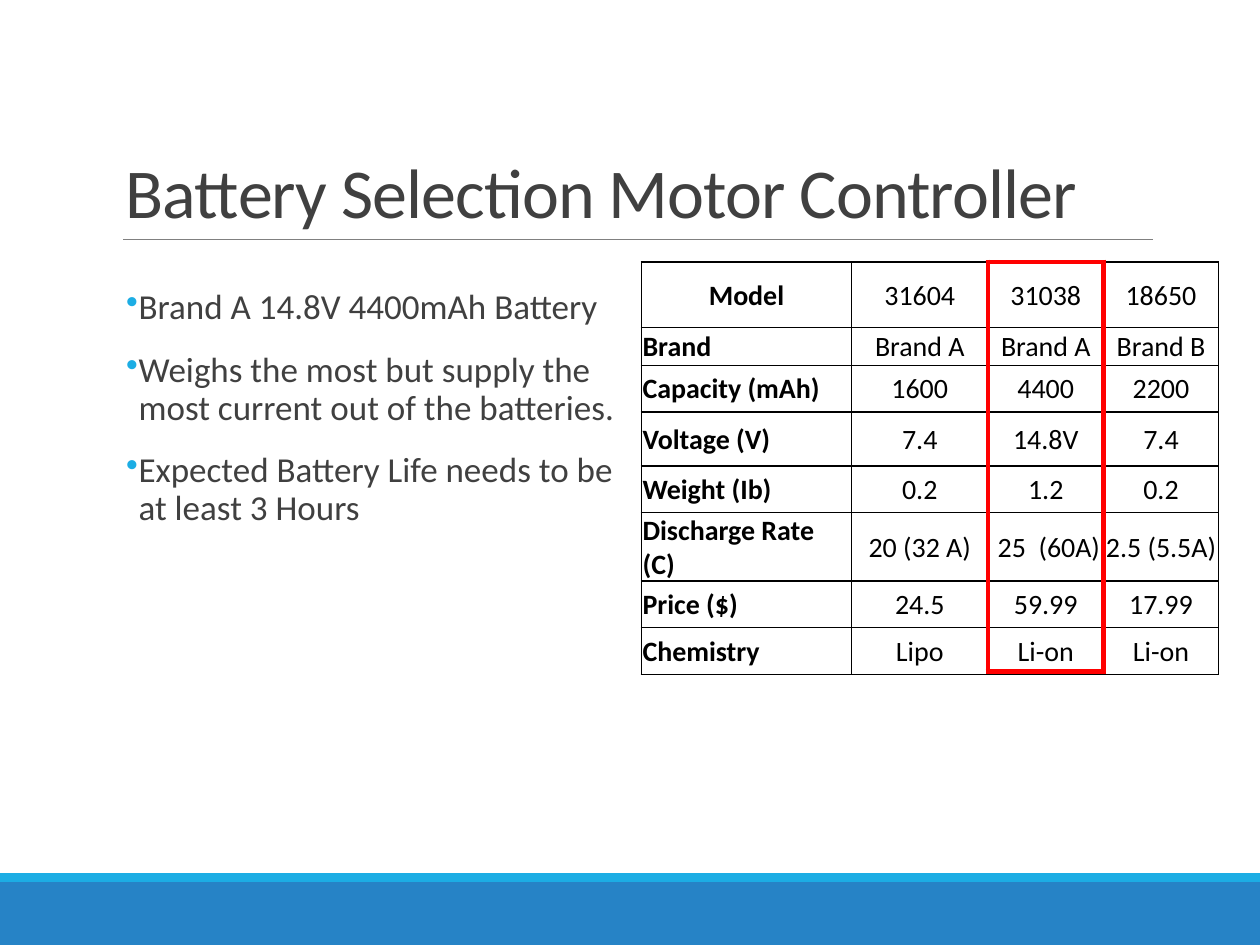
from lxml import etree
from pptx import Presentation
from pptx.dml.color import RGBColor
from pptx.enum.shapes import MSO_CONNECTOR, MSO_SHAPE
from pptx.enum.text import MSO_ANCHOR, PP_ALIGN
from pptx.oxml.ns import qn
from pptx.util import Inches, Pt

RECT, STRAIGHT = MSO_SHAPE.RECTANGLE, MSO_CONNECTOR.STRAIGHT
TOP, MIDDLE, BOTTOM = MSO_ANCHOR.TOP, MSO_ANCHOR.MIDDLE, MSO_ANCHOR.BOTTOM
LEFT, CENTER = PP_ALIGN.LEFT, PP_ALIGN.CENTER

# Content
TITLE = "Battery Selection Motor Controller"
POINTS = [
    "Brand A 14.8V 4400mAh Battery",
    "Weighs the most but supply the most current out of the batteries.",
    "Expected Battery Life needs to be at least 3 Hours",
]
BATTERIES = [
    ("Model", "31604", "31038", "18650"),
    ("Brand", "Brand A", "Brand A", "Brand B"),
    ("Capacity (mAh)", "1600", "4400", "2200"),
    ("Voltage (V)", "7.4", "14.8V", "7.4"),
    ("Weight (Ib)", "0.2", "1.2", "0.2"),
    ("Discharge Rate (C)", "20 (32 A)", " 25  (60A)", "2.5 (5.5A)"),
    ("Price ($)", "24.5", "59.99", "17.99"),
    ("Chemistry", "Lipo", "Li-on", "Li-on"),
]
CHOSEN = 2  # column of the selected battery

# Layout in inches
WIDTH, HEIGHT = 10, 7.5
FOOTER_H, STRIPE_H = 0.5, 0.07
TABLE_X, TABLE_Y = 5.09, 2.08
COLUMNS = [1.67, 1.08, 0.92, 0.91]
ROWS = [0.52, 0.3, 0.37, 0.43] + [0.37] * 4
FRAME_H = 3.25

FONT = "Calibri"
TITLE_FONT = {"name": FONT, "size": Pt(40), "bold": False}
POINT_FONT = {"name": FONT, "size": Pt(20), "bold": False}
CELL_FONT = {"name": FONT, "size": Pt(16)}
CELL_FORMAT = {
    "margin_left": Inches(0.01), "margin_right": Inches(0.01),
    "margin_top": Inches(0.01), "margin_bottom": 0, "vertical_anchor": MIDDLE,
}
POINT_FORMAT = {"line_spacing": 0.9, "space_before": Pt(12), "space_after": Pt(2)}
GREY, ACCENT = "404040", "1CADE4"


def rgb(value):
    return RGBColor.from_string(value)


def apply(target, settings):
    for key, value in settings.items():
        setattr(target, key, value)


def add_run(paragraph, text, font, color):
    run = paragraph.add_run()
    run.text = text
    apply(run.font, font)
    run.font.color.rgb = rgb(color)
    return run


def add_band(slide, top, height, color):
    band = slide.shapes.add_shape(RECT, 0, Inches(top), Inches(WIDTH), Inches(height))
    band.shadow.inherit = False
    band.fill.solid()
    band.fill.fore_color.rgb = rgb(color)
    band.line.fill.background()


def add_text_frame(slide, box, anchor, side):
    frame = slide.shapes.add_textbox(*map(Inches, box)).text_frame
    apply(frame, {"word_wrap": True, "vertical_anchor": anchor,
                  "margin_left": Inches(side), "margin_right": Inches(side)})
    return frame


def add_bullet(paragraph):
    props = paragraph._p.get_or_add_pPr()
    props.set("marL", str(Inches(0.1)))
    props.set("indent", str(-Inches(0.1)))
    color = etree.SubElement(props, qn("a:buClr"))
    etree.SubElement(color, qn("a:srgbClr"), val=ACCENT)
    etree.SubElement(props, qn("a:buChar"), char="•")


def add_borders(cell, color, points):
    props = cell._tc.get_or_add_tcPr()
    for side in ("lnL", "lnR", "lnT", "lnB"):
        line = etree.SubElement(props, qn(f"a:{side}"), w=str(Pt(points)))
        fill = etree.SubElement(line, qn("a:solidFill"))
        etree.SubElement(fill, qn("a:srgbClr"), val=color)


def add_grid(slide, left, top, columns, rows):
    box = (left, top, sum(columns), sum(rows))
    grid = slide.shapes.add_table(len(rows), len(columns), *map(Inches, box)).table
    apply(grid, {"first_row": False, "horz_banding": False})
    for column, width in zip(grid.columns, columns):
        column.width = Inches(width)
    for row, height in zip(grid.rows, rows):
        row.height = Inches(height)
    return grid


prs = Presentation()
prs.slide_width, prs.slide_height = Inches(WIDTH), Inches(HEIGHT)
slide = prs.slides.add_slide(prs.slide_layouts[6])

# Footer bands and title rule
footer_top = HEIGHT - FOOTER_H
add_band(slide, footer_top, FOOTER_H, "2683C6")
add_band(slide, footer_top - STRIPE_H, STRIPE_H, ACCENT)
rule = slide.shapes.add_connector(STRAIGHT, *map(Inches, (0.98, 1.9, 9.15, 1.9)))
rule.line.color.rgb = rgb("808080")
rule.line.width = Pt(0.5)
etree.SubElement(rule._element.spPr, qn("a:effectLst"))

# Title
title = add_text_frame(slide, (0.9, 0.31, 8.43, 1.59), BOTTOM, 0.1).paragraphs[0]
title.line_spacing = 0.85
title_run = add_run(title, TITLE, TITLE_FONT, GREY)
title_run.font._element.set("spc", "-50")

# Bullet points
points_frame = add_text_frame(slide, (1, 2.25, 4.05, 4.4), TOP, 0)
for i, point in enumerate(POINTS):
    paragraph = points_frame.add_paragraph() if i else points_frame.paragraphs[0]
    apply(paragraph, POINT_FORMAT)
    add_bullet(paragraph)
    add_run(paragraph, point, POINT_FONT, GREY)

# Battery comparison
comparison = add_grid(slide, TABLE_X, TABLE_Y, COLUMNS, ROWS)
for r, battery_row in enumerate(BATTERIES):
    for c, value in enumerate(battery_row):
        cell = comparison.cell(r, c)
        apply(cell, CELL_FORMAT)
        add_borders(cell, "000000", 1)
        cell.fill.solid()
        cell.fill.fore_color.rgb = rgb("FFFFFF")
        paragraph = cell.text_frame.paragraphs[0]
        paragraph.alignment = LEFT if c == 0 and r else CENTER
        add_run(paragraph, value, {**CELL_FONT, "bold": c == 0}, "000000")

# Red frame around the chosen battery
frame_x = TABLE_X + sum(COLUMNS[:CHOSEN])
frame = add_grid(slide, frame_x, TABLE_Y, [COLUMNS[CHOSEN]], [FRAME_H])
add_borders(frame.cell(0, 0), "FF0000", 3)
frame.cell(0, 0).fill.background()

prs.save("out.pptx")
